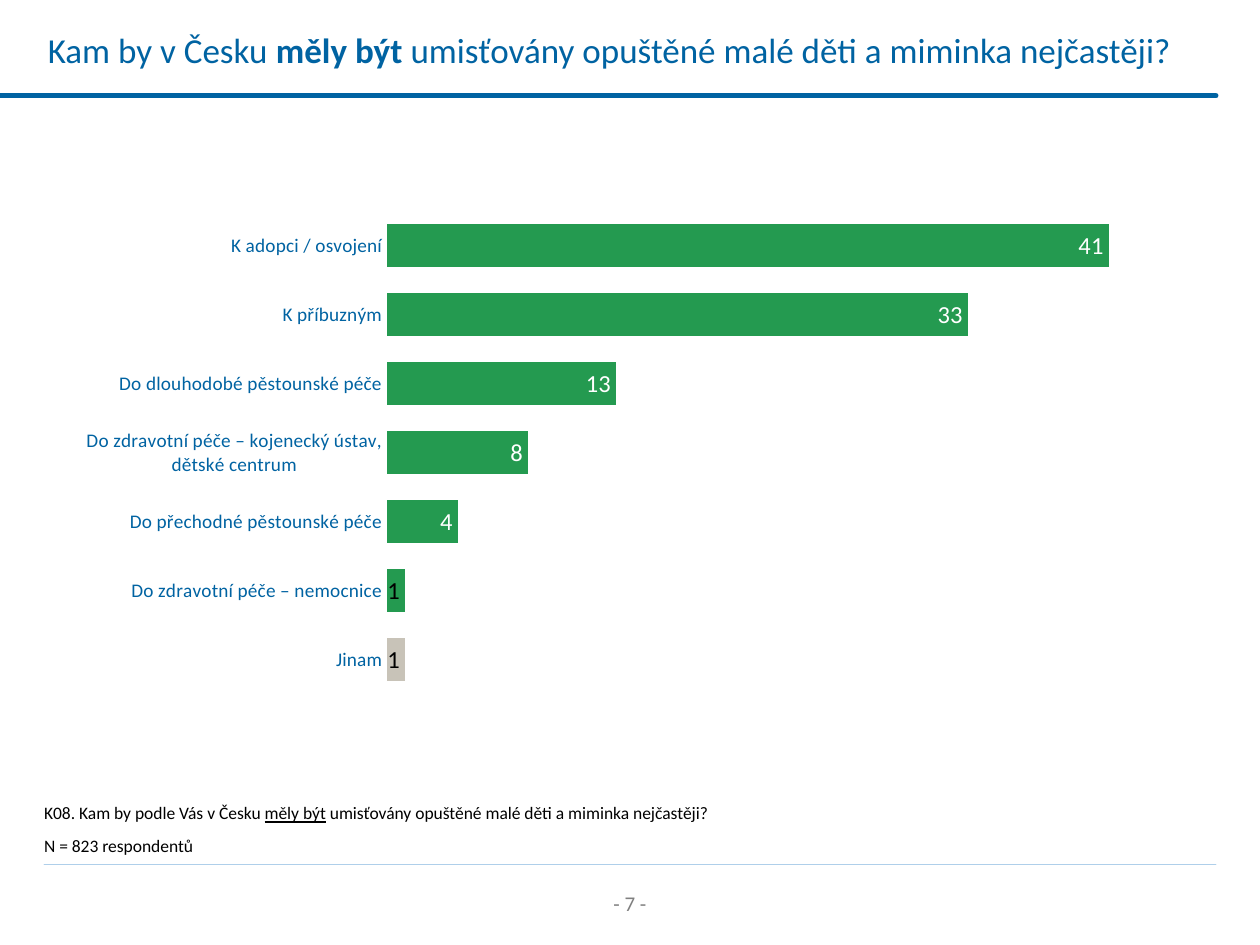
"""Build a survey slide with a bar chart of preferred placements for abandoned children."""
from lxml import etree
from pptx import Presentation
from pptx.chart.data import CategoryChartData
from pptx.dml.color import RGBColor
from pptx.enum.chart import XL_CHART_TYPE, XL_LABEL_POSITION, XL_TICK_LABEL_POSITION, XL_TICK_MARK
from pptx.enum.shapes import MSO_CONNECTOR
from pptx.enum.text import MSO_ANCHOR, MSO_AUTO_SIZE, PP_ALIGN
from pptx.oxml import parse_xml
from pptx.oxml.ns import qn
from pptx.util import Cm, Pt

BAR, STRAIGHT = XL_CHART_TYPE.BAR_CLUSTERED, MSO_CONNECTOR.STRAIGHT
INSIDE_END = XL_LABEL_POSITION.INSIDE_END
NO_TICK, NO_LABELS = XL_TICK_MARK.NONE, XL_TICK_LABEL_POSITION.NONE
LEFT, CENTER, MIDDLE = PP_ALIGN.LEFT, PP_ALIGN.CENTER, MSO_ANCHOR.MIDDLE
NO_FIT = MSO_AUTO_SIZE.NONE

BLUE = RGBColor(0x00, 0x63, 0xA2)
PALE_BLUE = RGBColor(0xAF, 0xCF, 0xEA)
GREEN = RGBColor(0x24, 0x9A, 0x50)
BEIGE = RGBColor(0xC8, 0xC3, 0xB8)
GREY = RGBColor(0x80, 0x80, 0x80)
BLACK = RGBColor(0x00, 0x00, 0x00)
WHITE = RGBColor(0xFF, 0xFF, 0xFF)
FONT = "Calibri"

EMPHASIS = "měly být"
REST = " umisťovány opuštěné malé děti a miminka nejčastěji?"
TITLE = [("Kam by v Česku ", None), (EMPHASIS, "bold"), (REST, None)]
QUESTION = [("K08. Kam by podle Vás v Česku ", None), (EMPHASIS, "underline"), (REST, None)]
SAMPLE = [("N = 823 respondentů", None)]
PAGE = [("- 7 -", None)]
ANSWERS = [
    ("K adopci / osvojení", 41),
    ("K příbuzným", 33),
    ("Do dlouhodobé pěstounské péče", 13),
    ("Do zdravotní péče – kojenecký ústav, dětské centrum", 8),
    ("Do přechodné pěstounské péče", 4),
    ("Do zdravotní péče – nemocnice", 1),
    ("Jinam", 1),
]
AXIS_MAX = 45.5
PLOT = {"x": 0.3, "y": 0.014, "w": 0.7, "h": 0.929}
MARGIN, RIGHT = 0.89, 24.51


def style(font, size, color):
    font.name, font.size, font.bold = FONT, Pt(size), False
    font.color.rgb = color


def write(tf, runs, size, color, align=LEFT):
    tf.word_wrap, tf.auto_size = True, NO_FIT
    p = tf.paragraphs[0]
    p.alignment = align
    for text, emphasis in runs:
        r = p.add_run()
        r.text = text
        style(r.font, size, color)
        if emphasis:
            setattr(r.font, emphasis, True)


def add_text(s, box, runs, size, color, align=LEFT, inset=0.25):
    tf = s.shapes.add_textbox(*map(Cm, box)).text_frame
    tf.margin_left = Cm(inset)
    write(tf, runs, size, color, align)


def add_rule(s, left, top, color, width):
    line = s.shapes.add_connector(STRAIGHT, Cm(left), Cm(top), Cm(RIGHT), Cm(top))
    line.line.color.rgb, line.line.width = color, Pt(width)
    line.line._get_or_add_ln().set("cap", "rnd")
    etree.SubElement(line._element.spPr, qn("a:effectLst"))


def set_plot_area(chart):
    modes = "".join(f'<c:{k}Mode val="edge"/>' for k in "xy")
    sizes = "".join(f'<c:{k} val="{v}"/>' for k, v in PLOT.items())
    layout = parse_xml(
        '<c:layout xmlns:c="http://schemas.openxmlformats.org/drawingml/2006/chart">'
        f'<c:manualLayout><c:layoutTarget val="inner"/>{modes}{sizes}</c:manualLayout></c:layout>')
    area = chart._chartSpace.chart.plotArea
    for old in area.findall(qn("c:layout")):
        area.remove(old)
    area.insert(0, layout)


def add_answers_chart(s):
    data = CategoryChartData(number_format="#,##0")
    data.categories = [name for name, _ in ANSWERS]
    data.add_series("Series 1", [value for _, value in ANSWERS])
    box = map(Cm, (MARGIN, 4.11, 23.06, 10.49))
    chart = s.shapes.add_chart(BAR, *box, data).chart
    chart.has_legend = chart.has_title = False
    style(chart.font, 18, BLACK)
    set_plot_area(chart)

    cat, val = chart.category_axis, chart.value_axis
    for axis in (cat, val):
        axis.major_tick_mark = axis.minor_tick_mark = NO_TICK
        axis.has_major_gridlines = False
        axis.format.line.fill.background()
    cat.reverse_order = True
    style(cat.tick_labels.font, 11, BLUE)
    val.minimum_scale, val.maximum_scale = 0, AXIS_MAX
    val.tick_label_position = NO_LABELS

    plot = chart.plots[0]
    plot.gap_width, plot.vary_by_categories = 60, False
    series = plot.series[0]
    series.format.fill.solid()
    series.format.fill.fore_color.rgb = GREEN
    labels = series.data_labels
    labels.show_value, labels.position = True, INSIDE_END
    labels.number_format, labels.number_format_is_linked = "#,##0", False
    style(labels.font, 14, WHITE)
    for i, (_, value) in enumerate(ANSWERS):
        if value == 1:
            label = series.points[i].data_label
            style(label.font, 14, BLACK)
            label.position = INSIDE_END
    other = series.points[len(ANSWERS) - 1].format.fill
    other.solid()
    other.fore_color.rgb = BEIGE


def main():
    prs = Presentation()
    prs.slide_width, prs.slide_height = Cm(25.4), Cm(19.05)
    s = prs.slides.add_slide(prs.slide_layouts[5])
    add_rule(s, MARGIN, 17.42, PALE_BLUE, 0.5)
    add_text(s, (11.1, 17.83, 3.2, 0.76), PAGE, 12, GREY, CENTER)
    add_rule(s, 0, 1.93, BLUE, 3)

    title = s.shapes.title
    title.left, title.top, title.width, title.height = map(Cm, (0.71, 0, 23.24, 2.01))
    title.text_frame.vertical_anchor = MIDDLE
    write(title.text_frame, TITLE, 20, BLUE)

    add_text(s, (MARGIN, 16.05, 23.65, 0.69), QUESTION, 10, BLACK, inset=0)
    add_text(s, (MARGIN, 16.71, 17.25, 0.69), SAMPLE, 10, BLACK, inset=0)
    add_answers_chart(s)
    prs.save("out.pptx")


if __name__ == "__main__":
    main()
